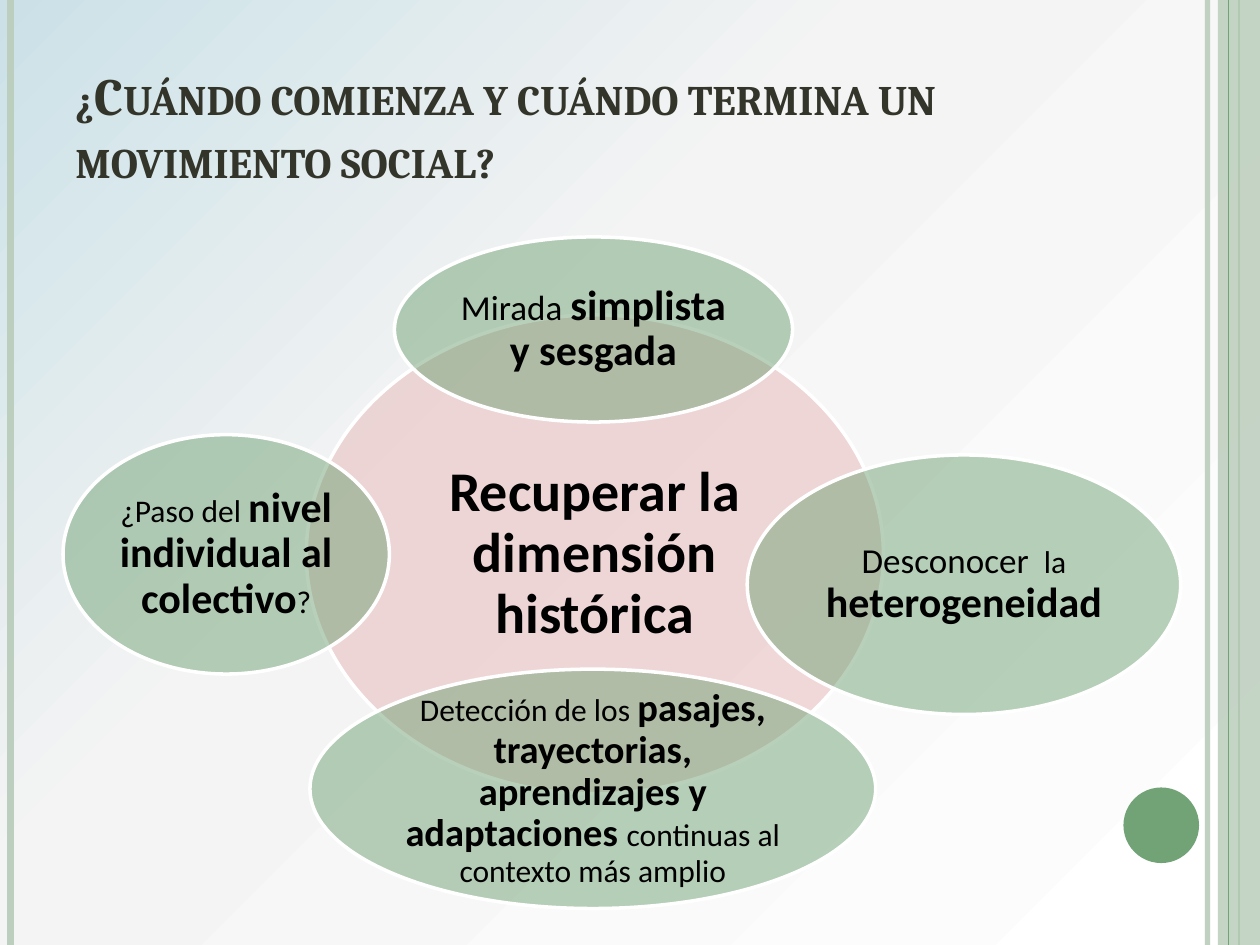
from lxml import etree
from pptx import Presentation
from pptx.dml.color import RGBColor
from pptx.enum import shapes, text
from pptx.oxml import parse_xml
from pptx.oxml.ns import nsdecls, qn
from pptx.util import Pt

COLORS = {"sky": "CBE1E7", "mist": "F4F4F4", "white": "FFFFFF", "sage": "BCCEBD",
          "green": "72A376", "rose": "E8B7B7", "title": "34352A", "black": "000000"}


def set_color(fill, name, alpha=100):
    """Make a fill solid in a named colour, with opacity in percent."""
    fill.solid()
    fill.fore_color.rgb = RGBColor.from_string(COLORS[name])
    if alpha < 100:
        for clr in fill._xPr.iter(qn("a:srgbClr")):
            etree.SubElement(clr, qn("a:alpha"), val=str(alpha * 1000))


def add_run(p, words, size, font="Calibri", color="black", bold=False, small_caps=False):
    """Add a formatted run to a paragraph."""
    r = p.add_run()
    r.text = words
    r.font.size, r.font.name, r.font.bold = Pt(size), font, bold
    set_color(r.font.fill, color)
    if small_caps:
        r._r.get_or_add_rPr().set("cap", "small")


def add_shape(s, kind, box, color, alpha=100, outline=None):
    """Add a filled preset shape, outlined in white when a width is given."""
    sp = s.shapes.add_shape(kind, *map(Pt, box))
    sp.shadow.inherit = False
    set_color(sp.fill, color, alpha)
    if outline:
        set_color(sp.line.fill, "white")
        sp.line.width = Pt(outline)
    else:
        sp.line.fill.background()
    return sp


def add_rule(s, x, height, color, width, alpha=100):
    """Add a vertical rule down the slide."""
    c = s.shapes.add_connector(shapes.MSO_CONNECTOR.STRAIGHT, Pt(x), Pt(0), Pt(x), Pt(height))
    set_color(c.line.fill, color, alpha)
    c.line.width = Pt(width)
    etree.SubElement(c._element.spPr, qn("a:effectLst"))


def add_background(s):
    """Fill the background with a gradient from the top left corner."""
    stops = "".join(f'<a:gs pos="{pos * 1000}"><a:srgbClr val="{COLORS[name]}"/></a:gs>'
                    for pos, name in ((0, "sky"), (40, "mist"), (100, "white")))
    grad = parse_xml(f'<a:gradFill {nsdecls("a")} rotWithShape="1"><a:gsLst>{stops}</a:gsLst>'
                     '<a:path path="circle"><a:fillToRect r="100000" b="100000"/></a:path>'
                     '</a:gradFill>')
    fill = s.background.fill
    fill.solid()
    bg = fill._xPr
    bg.replace(bg.find(qn("a:solidFill")), grad)


def add_frame(s, width, height):
    """Draw the rules, band and dot along the slide edges."""
    add_rule(s, width - 30, height, "sage", 3, 93)
    add_rule(s, 6, height, "sage", 4.5)
    add_rule(s, width - 12, height, "green", 1.5)
    add_shape(s, shapes.MSO_SHAPE.RECTANGLE, (width - 24, 0, 24, height), "sage", 87)
    add_rule(s, width - 18, height, "green", 0.75)
    add_shape(s, shapes.MSO_SHAPE.OVAL, (width - 78, height - 90, 43.2, 43.2), "green")


def add_title(s, box, words):
    """Add the slide title in small capitals."""
    tf = s.shapes.add_textbox(*map(Pt, box)).text_frame
    tf.word_wrap = True
    tf.vertical_anchor = text.MSO_ANCHOR.BOTTOM
    add_run(tf.paragraphs[0], words, 30, "Cambria", "title", bold=True, small_caps=True)


def add_bubble(s, box, color, inset, runs):
    """Add a translucent ellipse holding (words, size, bold) runs."""
    sp = add_shape(s, shapes.MSO_SHAPE.OVAL, box, color, 50, outline=2)
    tf = sp.text_frame
    tf.word_wrap = True
    tf.vertical_anchor = text.MSO_ANCHOR.MIDDLE
    tf.margin_left = tf.margin_right = tf.margin_top = tf.margin_bottom = Pt(inset)
    p = tf.paragraphs[0]
    p.alignment = text.PP_ALIGN.CENTER
    p.line_spacing = 0.9
    for words, size, bold in runs:
        add_run(p, words, size, bold=bold)


def add_diagram(s, left, top):
    """Place the central circle and the four ideas around it."""
    bubbles = [
        ((139, 44.6, 329.8, 273.6), "rose", 2.9,
         [("Recuperar la dimensión histórica", 32, True)]),
        ((189.4, 0, 227.5, 105.8), "green", 2.2,
         [("Mirada ", 20, False), ("simplista y sesgada", 24, True)]),
        ((391, 124.6, 247.7, 148.3), "green", 2.2,
         [("Desconocer ", 20, False), (" la ", 18, False), ("heterogeneidad", 24, True)]),
        ((141.1, 247, 323.3, 136.8), "green", 2.2,
         [("Detección de los ", 18, False),
          ("pasajes, trayectorias, aprendizajes y adaptaciones ", 22, True),
          ("continuas al contexto más amplio", 18, False)]),
        ((0, 113, 186.5, 136.8), "green", 2.2,
         [("¿Paso del ", 18, False), ("nivel individual al colectivo", 24, True),
          ("?", 18, False)]),
    ]
    for (x, y, w, h), color, inset, runs in bubbles:
        add_bubble(s, (left + x, top + y, w, h), color, inset, runs)


def main():
    """Build and save the slide."""
    prs = Presentation()
    prs.slide_width, prs.slide_height = Pt(720), Pt(540)
    s = prs.slides.add_slide(prs.slide_layouts[6])
    add_background(s)
    add_frame(s, 720, 540)
    add_title(s, (36, 21.6, 588, 90), "¿Cuándo comienza y cuándo termina un movimiento social?")
    add_diagram(s, 36, 135.4)
    prs.save("out.pptx")


if __name__ == "__main__":
    main()
